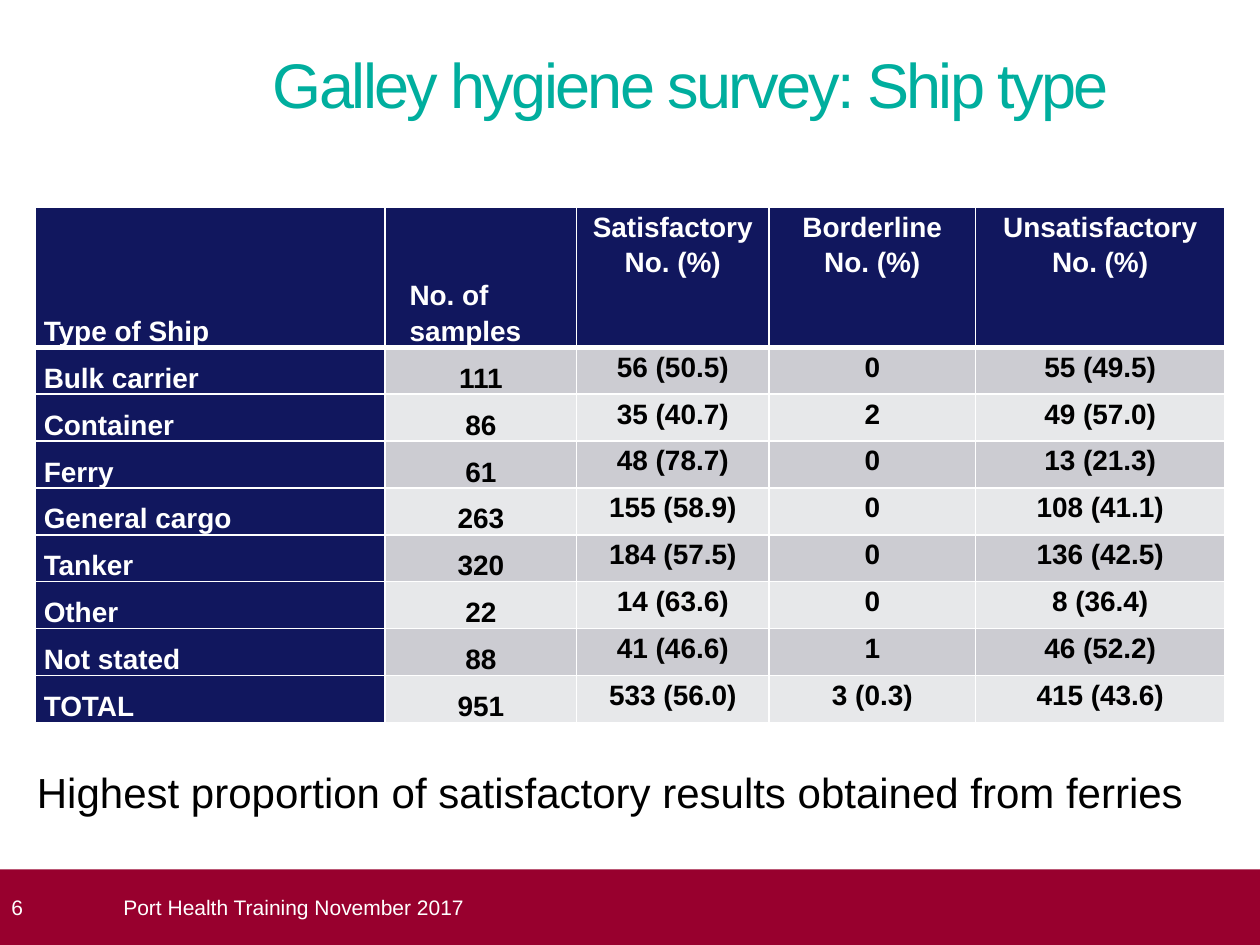
"""Build the galley hygiene survey slide with its table of results by ship type."""
from dataclasses import dataclass

import pptx
import pptx.dml.color
import pptx.enum.shapes
import pptx.enum.text
import pptx.oxml.ns
import pptx.util
from lxml import etree

Pt = pptx.util.Pt
RGBColor = pptx.dml.color.RGBColor
Align = pptx.enum.text.PP_ALIGN
Anchor = pptx.enum.text.MSO_ANCHOR
qualified = pptx.oxml.ns.qn

WHITE = RGBColor(0xFF, 0xFF, 0xFF)
BLACK = RGBColor(0, 0, 0)
TEAL = RGBColor(0x00, 0xAE, 0x9E)
NAVY = RGBColor(0x11, 0x17, 0x5E)
CRIMSON = RGBColor(0x98, 0x00, 0x2E)
BANDS = (RGBColor(0xCC, 0xCC, 0xD2), RGBColor(0xE7, 0xE8, 0xEA))

COLUMN_WIDTHS = (200, 109.5, 110, 118, 142.5)
HEADER_HEIGHT = 80
ROW_HEIGHT = 26.8
HEADINGS = (
    ("Type of Ship",),
    ("No. of samples",),
    ("Satisfactory", "No. (%)"),
    ("Borderline", "No. (%)"),
    ("Unsatisfactory", "No. (%)"),
)


@dataclass(frozen=True)
class ShipResult:
    """One row of survey results."""

    ship: str
    samples: str
    satisfactory: str
    borderline: str
    unsatisfactory: str

    def values(self) -> tuple[str, ...]:
        """Return the row in column order."""
        return (self.ship, self.samples, self.satisfactory,
                self.borderline, self.unsatisfactory)


RESULTS = (
    ShipResult("Bulk carrier", "111", "56 (50.5)", "0", "55 (49.5)"),
    ShipResult("Container", "86", "35 (40.7)", "2", "49 (57.0)"),
    ShipResult("Ferry", "61", "48 (78.7)", "0", "13 (21.3)"),
    ShipResult("General cargo", "263", "155 (58.9)", "0", "108 (41.1)"),
    ShipResult("Tanker", "320", "184 (57.5)", "0", "136 (42.5)"),
    ShipResult("Other", "22", "14 (63.6)", "0", "8 (36.4)"),
    ShipResult("Not stated", "88", "41 (46.6)", "1", "46 (52.2)"),
    ShipResult("TOTAL", "951", "533 (56.0)", "3 (0.3)", "415 (43.6)"),
)


def add_span(para, text: str, size: float, color: RGBColor, bold: bool = False):
    """Add one formatted run to a paragraph."""
    span = para.add_run()
    span.text = text
    span.font.name = "Arial"
    span.font.size = Pt(size)
    span.font.bold = bold
    span.font.color.rgb = color
    return span


def set_frame(frame, anchor: Anchor, left: float = 0, right: float = 0) -> None:
    """Give a text frame its anchor and insets."""
    frame.word_wrap = True
    frame.vertical_anchor = anchor
    frame.margin_left, frame.margin_right = Pt(left), Pt(right)
    frame.margin_top = frame.margin_bottom = Pt(0)


def set_borders(cell, top: float, bottom: float) -> None:
    """Draw white lines on all four sides of a cell."""
    properties = cell._tc.get_or_add_tcPr()
    for side, width in (("L", 1), ("R", 1), ("T", top), ("B", bottom)):
        line = etree.SubElement(properties, qualified(f"a:ln{side}"), w=str(Pt(width)))
        fill = etree.SubElement(line, qualified("a:solidFill"))
        etree.SubElement(fill, qualified("a:srgbClr"), val=str(WHITE))


def fill_cell(cell, lines: tuple[str, ...], row: int, column: int) -> None:
    """Write and format one table cell."""
    is_heading = row == 0 or column == 0
    cell.margin_left = cell.margin_right = Pt(5)
    cell.margin_top = cell.margin_bottom = Pt(0)
    cell.vertical_anchor = Anchor.BOTTOM if column < 2 else Anchor.TOP
    set_borders(cell, 3 if row == 1 else 1, 3 if row == 0 else 1)
    cell.fill.solid()
    cell.fill.fore_color.rgb = NAVY if is_heading else BANDS[(row - 1) % 2]
    for index, text in enumerate(lines):
        frame = cell.text_frame
        para = frame.add_paragraph() if index else frame.paragraphs[0]
        para.line_spacing = 1.15
        is_left = column == 0 or (row == 0 and column == 1)
        para.alignment = Align.LEFT if is_left else Align.CENTER
        if row == 0 and column == 1:
            para._p.get_or_add_pPr().set("marL", str(Pt(9)))
        add_span(para, text, 16, WHITE if is_heading else BLACK, bold=True)


def add_title(page) -> None:
    """Place and write the slide title."""
    title = page.shapes.title
    title.left, title.top, title.width, title.height = Pt(156), Pt(26), Pt(632), Pt(51)
    set_frame(title.text_frame, Anchor.TOP)
    title.text_frame.auto_size = pptx.enum.text.MSO_AUTO_SIZE.NONE
    para = title.text_frame.paragraphs[0]
    para.alignment = Align.LEFT
    span = add_span(para, "Galley hygiene survey: Ship type", 36, TEAL)
    span.font._element.set("spc", "-150")


def add_results_table(page) -> None:
    """Add the table of results."""
    height = HEADER_HEIGHT + ROW_HEIGHT * len(RESULTS)
    table = page.shapes.add_table(
        len(RESULTS) + 1, len(COLUMN_WIDTHS),
        Pt(20), Pt(118.5), Pt(sum(COLUMN_WIDTHS)), Pt(height)).table
    for column, width in zip(table.columns, COLUMN_WIDTHS):
        column.width = Pt(width)
    rows = [HEADINGS] + [tuple((text,) for text in result.values()) for result in RESULTS]
    for row, cells in enumerate(rows):
        table.rows[row].height = Pt(ROW_HEIGHT if row else HEADER_HEIGHT)
        for column, lines in enumerate(cells):
            fill_cell(table.cell(row, column), lines, row, column)


def add_footer(page) -> None:
    """Add the footer band with the page number and event name."""
    band = page.shapes.add_shape(
        pptx.enum.shapes.MSO_SHAPE.RECTANGLE, Pt(0), Pt(496.8), Pt(720), Pt(43.2))
    band.shadow.inherit = False
    band.fill.solid()
    band.fill.fore_color.rgb = CRIMSON
    band.line.fill.background()
    event = page.shapes.add_textbox(Pt(70.5), Pt(496.8), Pt(635), Pt(43.2))
    for box, text, left, right in ((band, "6", 6.5, 7.2),
                                   (event, "Port Health Training November 2017", 0, 0)):
        set_frame(box.text_frame, Anchor.MIDDLE, left, right)
        para = box.text_frame.paragraphs[0]
        para.alignment = Align.LEFT
        add_span(para, text, 12, WHITE)


def add_finding(page) -> None:
    """Add the sentence below the table."""
    box = page.shapes.add_textbox(Pt(14), Pt(434.5), Pt(675), Pt(36))
    box.text_frame.word_wrap = True
    box.text_frame.auto_size = pptx.enum.text.MSO_AUTO_SIZE.SHAPE_TO_FIT_TEXT
    add_span(box.text_frame.paragraphs[0],
             "Highest proportion of satisfactory results obtained from ferries", 24, BLACK)


def main() -> None:
    """Create and save the deck."""
    deck = pptx.Presentation()
    deck.slide_width, deck.slide_height = Pt(720), Pt(540)
    page = deck.slides.add_slide(deck.slide_layouts[5])
    add_title(page)
    add_results_table(page)
    add_footer(page)
    add_finding(page)
    deck.save("out.pptx")


if __name__ == "__main__":
    main()
